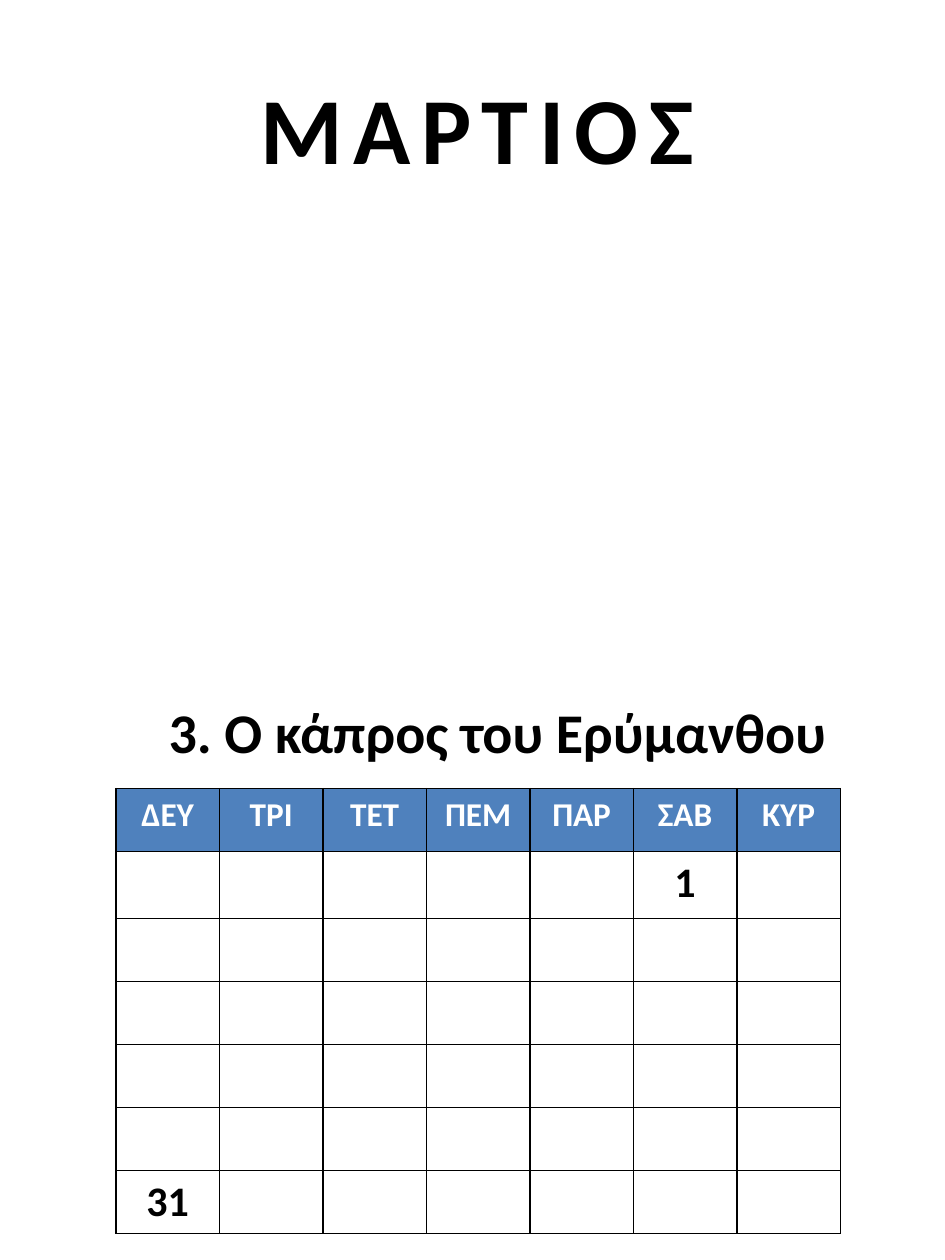
from lxml.etree import SubElement
from pptx import Presentation
from pptx.dml.color import RGBColor
from pptx.enum.text import PP_ALIGN
from pptx.oxml import parse_xml
from pptx.oxml.ns import nsdecls, qn
from pptx.util import Inches, Pt

BLACK = RGBColor(0x00, 0x00, 0x00)
WHITE = RGBColor(0xFF, 0xFF, 0xFF)
BLUE = RGBColor(0x4F, 0x81, 0xBD)

DAYS = ["ΔΕΥ", "ΤΡΙ", "ΤΕΤ", "ΠΕΜ", "ΠΑΡ", "ΣΑΒ", "ΚΥΡ"]
DATES = {(1, 5): "1", (6, 0): "31"}
ROW_HEIGHTS = [0.5, 0.53] + [0.5] * 5
CALENDAR_LEFT, CALENDAR_TOP, CALENDAR_WIDTH = 0.92, 6.26, 5.75


def style_paragraph(paragraph, size, color=None):
    paragraph.alignment = PP_ALIGN.CENTER
    paragraph.font.name = "Calibri"
    paragraph.font.size = Pt(size)
    paragraph.font.bold = True
    if color is not None:
        paragraph.font.color.rgb = color


def add_border(cell):
    properties = cell._tc.get_or_add_tcPr()
    for side in ("lnL", "lnR", "lnT", "lnB"):
        line = SubElement(properties, qn(f"a:{side}"), w=str(Pt(1)))
        fill = SubElement(line, qn("a:solidFill"))
        SubElement(fill, qn("a:srgbClr"), val=str(BLACK))


presentation = Presentation()
presentation.slide_width = Inches(7.5)
presentation.slide_height = Inches(10)
slide = presentation.slides.add_slide(presentation.slide_layouts[6])

# Month name and caption
headings = [
    ("ΜΑΡΤΙΟΣ", 0.6, 0.51, 6.38, 1.01, 54, None),
    ("3. Ο κάπρος του Ερύµανθου", CALENDAR_LEFT, 5.49, 6.06, 0.64, 32, BLACK),
]
paragraphs = []
for text, left, top, width, height, size, color in headings:
    box = slide.shapes.add_textbox(Inches(left), Inches(top), Inches(width), Inches(height))
    box.text_frame.word_wrap = True
    paragraph = box.text_frame.paragraphs[0]
    paragraph.text = text
    style_paragraph(paragraph, size, color)
    paragraphs.append(paragraph)

# Wide letter spacing and a thin outline on the month name
month_properties = paragraphs[0].runs[0]._r.get_or_add_rPr()
month_properties.set("spc", "600")
month_properties.insert(0, parse_xml(
    f'<a:ln {nsdecls("a")} w="{Pt(1)}"><a:solidFill>'
    f'<a:srgbClr val="{BLACK}"/></a:solidFill></a:ln>'))

# Calendar grid
table = slide.shapes.add_table(
    len(ROW_HEIGHTS), len(DAYS), Inches(CALENDAR_LEFT), Inches(CALENDAR_TOP),
    Inches(CALENDAR_WIDTH), Inches(sum(ROW_HEIGHTS))).table
for column in table.columns:
    column.width = Inches(CALENDAR_WIDTH / len(DAYS))
for row_index, height in enumerate(ROW_HEIGHTS):
    table.rows[row_index].height = Inches(height)
    is_header = row_index == 0
    for column_index, day in enumerate(DAYS):
        cell = table.cell(row_index, column_index)
        add_border(cell)
        if is_header:
            cell.fill.solid()
            cell.fill.fore_color.rgb = BLUE
        else:
            cell.fill.background()
        text = day if is_header else DATES.get((row_index, column_index))
        if text:
            cell.text = text
            style_paragraph(cell.text_frame.paragraphs[0],
                            19 if is_header else 24, WHITE if is_header else BLACK)

presentation.save("out.pptx")
